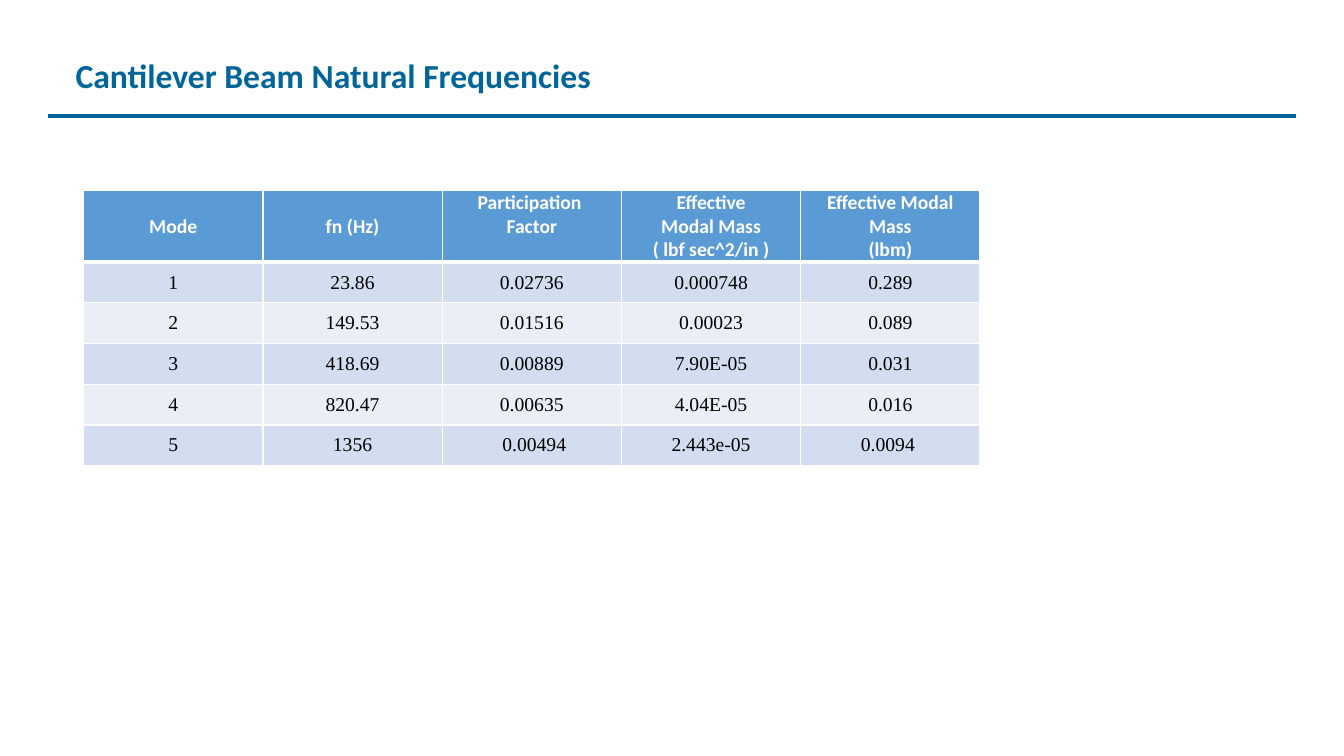
from lxml import etree
from pptx import Presentation
from pptx.dml.color import RGBColor
from pptx.enum.shapes import MSO_CONNECTOR
from pptx.enum.text import MSO_ANCHOR, PP_ALIGN
from pptx.oxml.ns import qn
from pptx.util import Inches, Pt

STRAIGHT = MSO_CONNECTOR.STRAIGHT
TOP, MIDDLE = MSO_ANCHOR.TOP, MSO_ANCHOR.MIDDLE
LEFT, CENTER = PP_ALIGN.LEFT, PP_ALIGN.CENTER

TEAL = RGBColor(0x00, 0x66, 0x99)
HEADER_BLUE = RGBColor(0x5B, 0x9B, 0xD5)
BAND_DARK = RGBColor(0xD2, 0xDE, 0xEF)
BAND_LIGHT = RGBColor(0xEA, 0xEF, 0xF7)
WHITE = RGBColor(0xFF, 0xFF, 0xFF)
BLACK = RGBColor(0x00, 0x00, 0x00)

HEADERS = [
    "Mode",
    "fn (Hz)",
    "Participation \nFactor",
    "Effective\nModal Mass\n( lbf sec^2/in )",
    "Effective Modal Mass\n(lbm)",
]
MODES = [
    ["1", "23.86", "0.02736", "0.000748", "0.289"],
    ["2", "149.53", "0.01516", "0.00023", "0.089"],
    ["3", "418.69", "0.00889", "7.90E-05", "0.031"],
    ["4", "820.47", "0.00635", "4.04E-05", "0.016"],
    ["5", "1356", " 0.00494", "2.443e-05", "0.0094 "],
]


class SlideBuilder:
    title_size = 24
    table_size = 14
    heading_font = "Calibri"
    value_font = "Times New Roman"

    def __init__(self, presentation):
        self.slide = presentation.slides.add_slide(presentation.slide_layouts[5])

    def format_text(self, text_frame, font_name, size, color, bold, alignment):
        for paragraph in text_frame.paragraphs:
            paragraph.alignment = alignment
            for run in paragraph.runs:
                font = run.font
                font.name, font.size, font.bold = font_name, Pt(size), bold
                font.color.rgb = color

    def add_title(self, text, left, top, width, height):
        title = self.slide.shapes.title
        title.left, title.top = Inches(left), Inches(top)
        title.width, title.height = Inches(width), Inches(height)
        title.text_frame.text = text
        title.text_frame.vertical_anchor = TOP
        self.format_text(title.text_frame, self.heading_font,
                         self.title_size, TEAL, True, LEFT)

    def add_rule(self, left, right, top):
        rule = self.slide.shapes.add_connector(
            STRAIGHT, Inches(left), Inches(top), Inches(right), Inches(top))
        rule.line.color.rgb = TEAL
        rule.line.width = Pt(2.5)
        etree.SubElement(rule._element.spPr, qn("a:effectLst"))

    def set_borders(self, cell, bottom_width):
        properties = cell._tc.get_or_add_tcPr()
        widths = {"L": 1, "R": 1, "T": 1, "B": bottom_width}
        for side, width in widths.items():
            line = etree.SubElement(properties, qn(f"a:ln{side}"), w=str(Pt(width)))
            fill = etree.SubElement(line, qn("a:solidFill"))
            etree.SubElement(fill, qn("a:srgbClr"), val=str(WHITE))

    def add_table(self, headers, rows, left, top, width, height, header_height):
        table = self.slide.shapes.add_table(
            len(rows) + 1, len(headers), Inches(left), Inches(top),
            Inches(width), Inches(height)).table
        for column in table.columns:
            column.width = Inches(width / len(headers))
        for index, row in enumerate(table.rows):
            row.height = Inches((height - header_height) / len(rows)
                                if index else header_height)
        for row_index, texts in enumerate([headers, *rows]):
            is_header = row_index == 0
            band = BAND_DARK if row_index % 2 else BAND_LIGHT
            for column_index, text in enumerate(texts):
                cell = table.cell(row_index, column_index)
                cell.margin_left = cell.margin_right = Inches(0.07)
                cell.margin_top = cell.margin_bottom = 0
                cell.vertical_anchor = TOP if "\n" in text else MIDDLE
                self.set_borders(cell, 3 if is_header else 1)
                cell.fill.solid()
                cell.fill.fore_color.rgb = HEADER_BLUE if is_header else band
                cell.text_frame.text = text
                self.format_text(
                    cell.text_frame,
                    self.heading_font if is_header else self.value_font,
                    self.table_size, WHITE if is_header else BLACK,
                    is_header, CENTER)


def main():
    presentation = Presentation()
    presentation.slide_width = Inches(13.33)
    presentation.slide_height = Inches(7.5)

    builder = SlideBuilder(presentation)
    builder.add_rule(0.48, 12.85, 1.15)
    builder.add_title("Cantilever Beam Natural Frequencies", 0.65, 0.49, 7.12, 0.5)
    builder.add_table(HEADERS, MODES, 0.83, 1.89, 8.89, 2.73, header_height=0.71)

    presentation.save("out.pptx")


if __name__ == "__main__":
    main()
